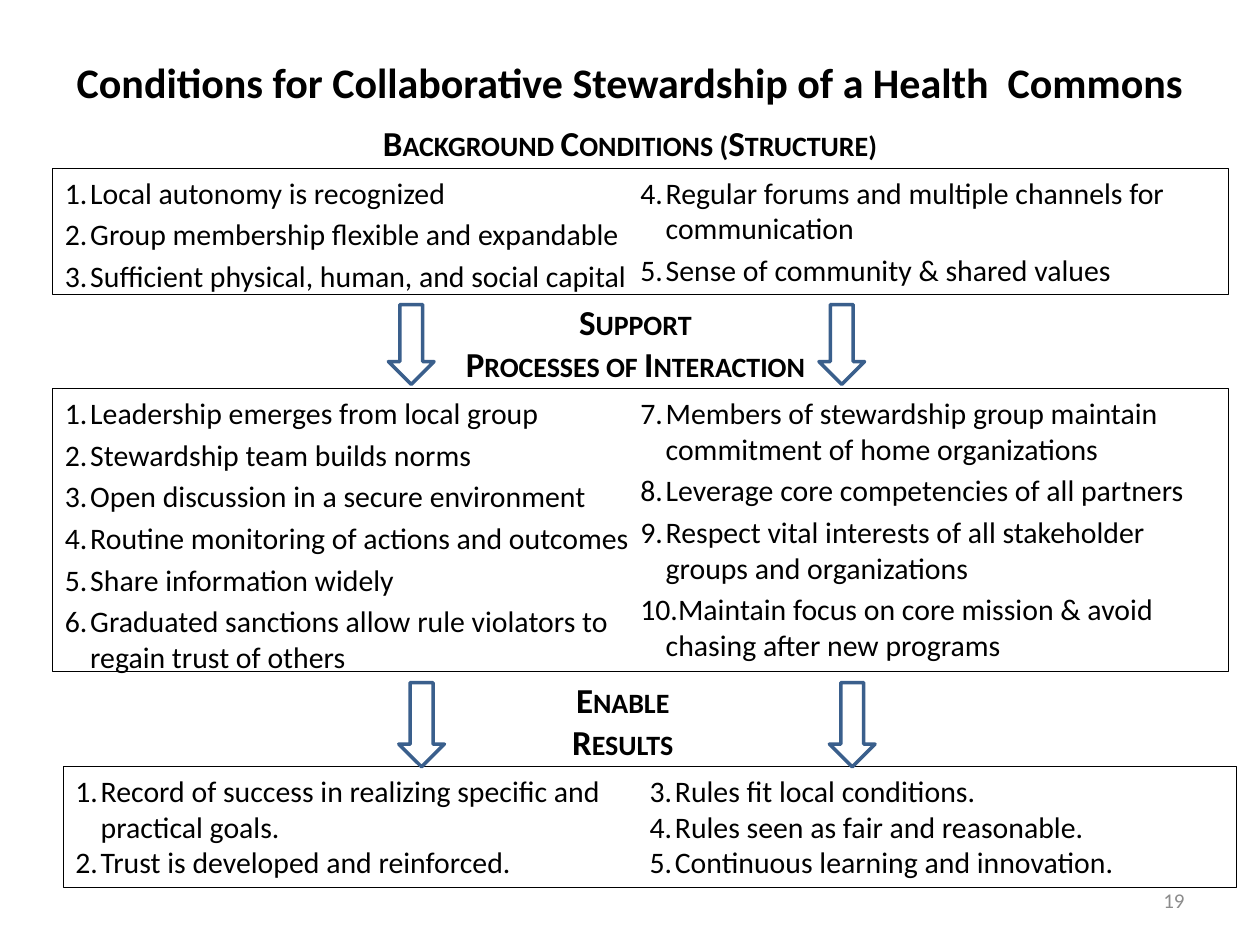
from lxml.etree import SubElement
from pptx import Presentation
from pptx.dml.color import RGBColor
from pptx.enum.shapes import MSO_SHAPE
from pptx.enum.text import MSO_ANCHOR, PP_ALIGN
from pptx.oxml.ns import qn
from pptx.util import Cm, Pt

BLACK, GREY, BLUE = "000000", "8C8C8C", "3A5F8C"
HEADING = {"size": Pt(20), "bold": True}
LIST = {"size": Pt(17)}
ARROW_WIDTH = 0.92
INDENT = 0.51

BACKGROUND = [
    "Local autonomy is recognized",
    "Group membership flexible and expandable",
    "Sufficient physical, human, and social capital",
    "Regular forums and multiple channels for communication",
    "Sense of community & shared values",
]
PROCESSES = [
    "Leadership emerges from local group",
    "Stewardship team builds norms",
    "Open discussion in a secure environment",
    "Routine monitoring of actions and outcomes",
    "Share information widely",
    "Graduated sanctions allow rule violators to regain trust of others",
    "Members of stewardship group maintain commitment of home organizations",
    "Leverage core competencies of all partners",
    "Respect vital interests of all stakeholder groups and organizations",
    "Maintain focus on core mission & avoid chasing after new programs",
]
RESULTS = [
    "Record of success in realizing specific and practical goals.",
    "Trust is developed and reinforced.",
    "Rules fit local conditions.",
    "Rules seen as fair and reasonable.",
    "Continuous learning and innovation.",
]


def color(value):
    return RGBColor.from_string(value)


def add_text(slide, box, lines, font, align=PP_ALIGN.CENTER,
             anchor=MSO_ANCHOR.TOP, text_color=BLACK):
    """Add a text box with one paragraph for each line."""
    shape = slide.shapes.add_textbox(*map(Cm, box))
    frame = shape.text_frame
    frame.word_wrap = True
    frame.vertical_anchor = anchor
    frame.text = "\n".join(lines)
    for paragraph in frame.paragraphs:
        paragraph.alignment = align
        run_font = paragraph.runs[0].font
        for name, value in {"name": "Calibri", **font}.items():
            setattr(run_font, name, value)
        run_font.color.rgb = color(text_color)
    return shape


def add_heading(slide, box, lines):
    """Add centred bold lines in small capitals."""
    shape = add_text(slide, box, lines, HEADING)
    for paragraph in shape.text_frame.paragraphs:
        paragraph.runs[0].font._element.set("cap", "small")


def add_numbered_box(slide, box, items, space_before=0):
    """Add an outlined box with a numbered list in two columns."""
    shape = add_text(slide, box, items, LIST, PP_ALIGN.LEFT)
    shape.line.color.rgb = color(BLACK)
    shape.line.width = Pt(0.25)
    shape.text_frame._txBody.bodyPr.set("numCol", "2")
    for paragraph in shape.text_frame.paragraphs:
        paragraph.space_before = Pt(space_before)
        properties = paragraph._p.get_or_add_pPr()
        properties.set("marL", str(Cm(INDENT)))
        properties.set("indent", str(-Cm(INDENT)))
        SubElement(properties, qn("a:buFont"), typeface="+mj-lt")
        SubElement(properties, qn("a:buAutoNum"), type="arabicPeriod")


def add_arrow_pair(slide, lefts, top, height):
    for left in lefts:
        arrow = slide.shapes.add_shape(
            MSO_SHAPE.DOWN_ARROW, Cm(left), Cm(top), Cm(ARROW_WIDTH), Cm(height))
        arrow.shadow.inherit = False
        arrow.fill.background()
        arrow.line.color.rgb = color(BLUE)
        arrow.line.width = Pt(2)


def main():
    presentation = Presentation()
    presentation.slide_width, presentation.slide_height = Cm(25.4), Cm(19.05)
    slide = presentation.slides.add_slide(presentation.slide_layouts[6])

    add_text(slide, (1.27, 0.76, 22.86, 1.78),
             ["Conditions for Collaborative Stewardship of a Health  Commons"],
             {"size": Pt(24), "bold": True}, anchor=MSO_ANCHOR.MIDDLE)

    add_numbered_box(slide, (1.06, 3.39, 23.7, 2.54), BACKGROUND, 3.4)
    add_numbered_box(slide, (1.06, 7.83, 23.7, 5.71), PROCESSES, 3.4)
    add_numbered_box(slide, (1.27, 15.45, 23.65, 2.43), RESULTS)

    add_heading(slide, (1.06, 2.33, 23.28, 1.11),
                ["Background Conditions (Structure)"])
    add_heading(slide, (8.47, 5.93, 8.68, 1.97),
                ["Support", "Processes of Interaction"])
    add_heading(slide, (10.37, 13.55, 4.37, 1.97), ["Enable", "Results"])

    add_arrow_pair(slide, (7.83, 16.51), 6.14, 1.61)
    add_arrow_pair(slide, (8.04, 16.72), 13.76, 1.7)

    add_text(slide, (18.2, 17.65, 5.93, 1.01), ["19"], {"size": Pt(12)},
             PP_ALIGN.RIGHT, MSO_ANCHOR.MIDDLE, GREY)

    presentation.save("out.pptx")


if __name__ == "__main__":
    main()
